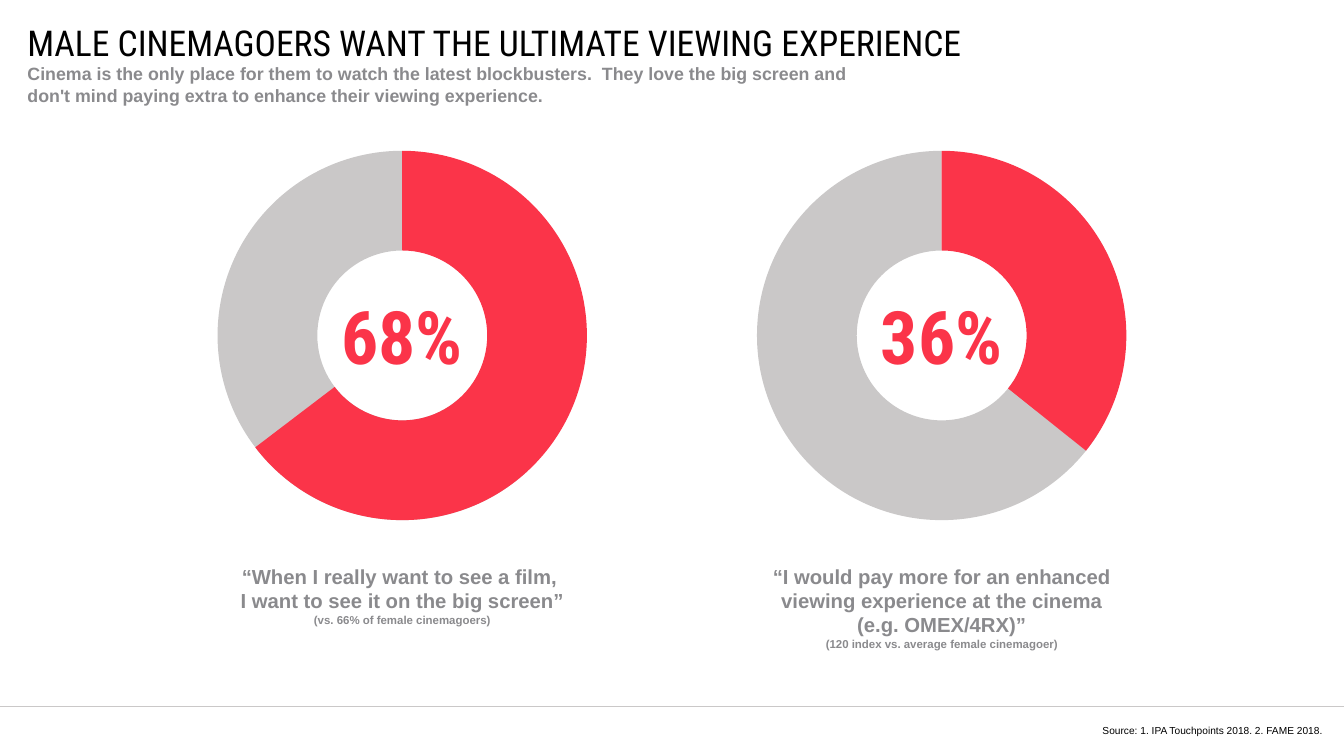
from lxml import etree
from pptx import Presentation
from pptx.dml.color import RGBColor
from pptx.enum.shapes import MSO_CONNECTOR, MSO_SHAPE
from pptx.enum.text import MSO_ANCHOR, MSO_AUTO_SIZE, PP_ALIGN
from pptx.oxml.ns import qn
from pptx.util import Inches, Pt

STRAIGHT = MSO_CONNECTOR.STRAIGHT
BLOCK_ARC = MSO_SHAPE.BLOCK_ARC
TOP, MIDDLE = MSO_ANCHOR.TOP, MSO_ANCHOR.MIDDLE
LEFT, CENTER, RIGHT = PP_ALIGN.LEFT, PP_ALIGN.CENTER, PP_ALIGN.RIGHT
NO_AUTOFIT = MSO_AUTO_SIZE.NONE

BLACK = RGBColor(0x00, 0x00, 0x00)
GREY_TEXT = RGBColor(0x8A, 0x8A, 0x8D)
GREY_RING = RGBColor(0xCA, 0xC8, 0xC8)
RED = RGBColor(0xFB, 0x34, 0x49)
HEADING_FONT = "Roboto Condensed"
BODY_FONT = "Arial"

RING_TOP, RING_SIZE, RING_WIDTH = 1.65, 4.04, 0.27
TWELVE_OCLOCK = 270
ADJUSTMENT_PER_DEGREE = 0.6


def place(s, left, top, width, height):
    s.left, s.top = Inches(left), Inches(top)
    s.width, s.height = Inches(width), Inches(height)


def write(s, lines, font, color, bold=False, align=LEFT, anchor=TOP, inset=True):
    tf = s.text_frame
    tf.text = "\n".join(text for text, size in lines)
    tf.word_wrap = True
    tf.auto_size = NO_AUTOFIT
    tf.vertical_anchor = anchor
    if not inset:
        tf.margin_left = tf.margin_right = tf.margin_top = tf.margin_bottom = 0
    for p, (text, size) in zip(tf.paragraphs, lines):
        p.alignment = align
        p.space_before = Pt(0)
        r = p.runs[0]
        r.font.name, r.font.size, r.font.bold = font, Pt(size), bold
        r.font.color.rgb = color


def remove_bullets(s):
    for p in s.text_frame.paragraphs:
        pPr = p._p.get_or_add_pPr()
        pPr.set("marL", "0")
        pPr.set("indent", "0")
        etree.SubElement(pPr, qn("a:buNone"))


def add_text(slide, box, lines, *style, **options):
    s = slide.shapes.add_textbox(*map(Inches, box))
    write(s, lines, *style, **options)


def add_rule(slide, y, width):
    line = slide.shapes.add_connector(STRAIGHT, 0, Inches(y), Inches(width), Inches(y))
    line.line.color.rgb = GREY_RING
    line.line.width = Pt(0.5)
    etree.SubElement(line._element.spPr, qn("a:effectLst"))


def add_arc(group, left, start, end, color):
    s = group.shapes.add_shape(BLOCK_ARC, Inches(left), Inches(RING_TOP),
                               Inches(RING_SIZE), Inches(RING_SIZE))
    s.adjustments[0] = start * ADJUSTMENT_PER_DEGREE
    s.adjustments[1] = end * ADJUSTMENT_PER_DEGREE
    s.adjustments[2] = RING_WIDTH
    s.shadow.inherit = False
    s.fill.solid()
    s.fill.fore_color.rgb = color
    s.line.fill.background()


def add_ring(slide, left, grey_start, red_end, percent, quote):
    group = slide.shapes.add_group_shape()
    add_arc(group, left, grey_start, TWELVE_OCLOCK, GREY_RING)
    add_arc(group, left, TWELVE_OCLOCK, red_end, RED)
    add_text(slide, (left + 0.91, 3.17, 2.22, 0.98), [(percent, 58)], HEADING_FONT, RED,
             bold=True, align=CENTER, anchor=MIDDLE, inset=False)
    add_text(slide, (left, 6.12, RING_SIZE, 1.09), quote, BODY_FONT, GREY_TEXT,
             bold=True, align=CENTER)


def main():
    prs = Presentation()
    prs.slide_width, prs.slide_height = Inches(14.7), Inches(8.27)
    slide = prs.slides.add_slide(prs.slide_layouts[3])
    title, intro, source = (slide.placeholders[i] for i in range(3))

    place(title, 0.3, 0.3, 13.58, 0.32)
    write(title, [("MALE CINEMAGOERS WANT THE ULTIMATE VIEWING EXPERIENCE", 28)],
          HEADING_FONT, BLACK, anchor=MIDDLE, inset=False)

    place(intro, 0.3, 0.69, 9.49, 0.48)
    write(intro, [("Cinema is the only place for them to watch the latest blockbusters.  "
                   "They love the big screen and don't mind paying extra to enhance "
                   "their viewing experience.", 14)],
          BODY_FONT, GREY_TEXT, bold=True, inset=False)
    remove_bullets(intro)

    place(source, 11.09, 7.93, 3.41, 0.13)
    write(source, [("Source: 1. IPA Touchpoints 2018. 2. FAME 2018. ", 8)],
          BODY_FONT, BLACK, align=RIGHT, anchor=MIDDLE, inset=False)
    remove_bullets(source)

    add_rule(slide, 7.73, 14.7)
    add_ring(slide, 2.38, 47.2, 142.7, "68%", [
        ("“When I really want to see a film, ", 16),
        ("I want to see it on the big screen”", 16),
        ("(vs. 66% of female cinemagoers)", 9)])
    add_ring(slide, 8.28, 32.9, 38.6, "36%", [
        ("“I would pay more for an enhanced viewing experience at the cinema "
         "(e.g. OMEX/4RX)”", 16),
        ("(120 index vs. average female cinemagoer)", 9)])
    prs.save("out.pptx")


if __name__ == "__main__":
    main()
